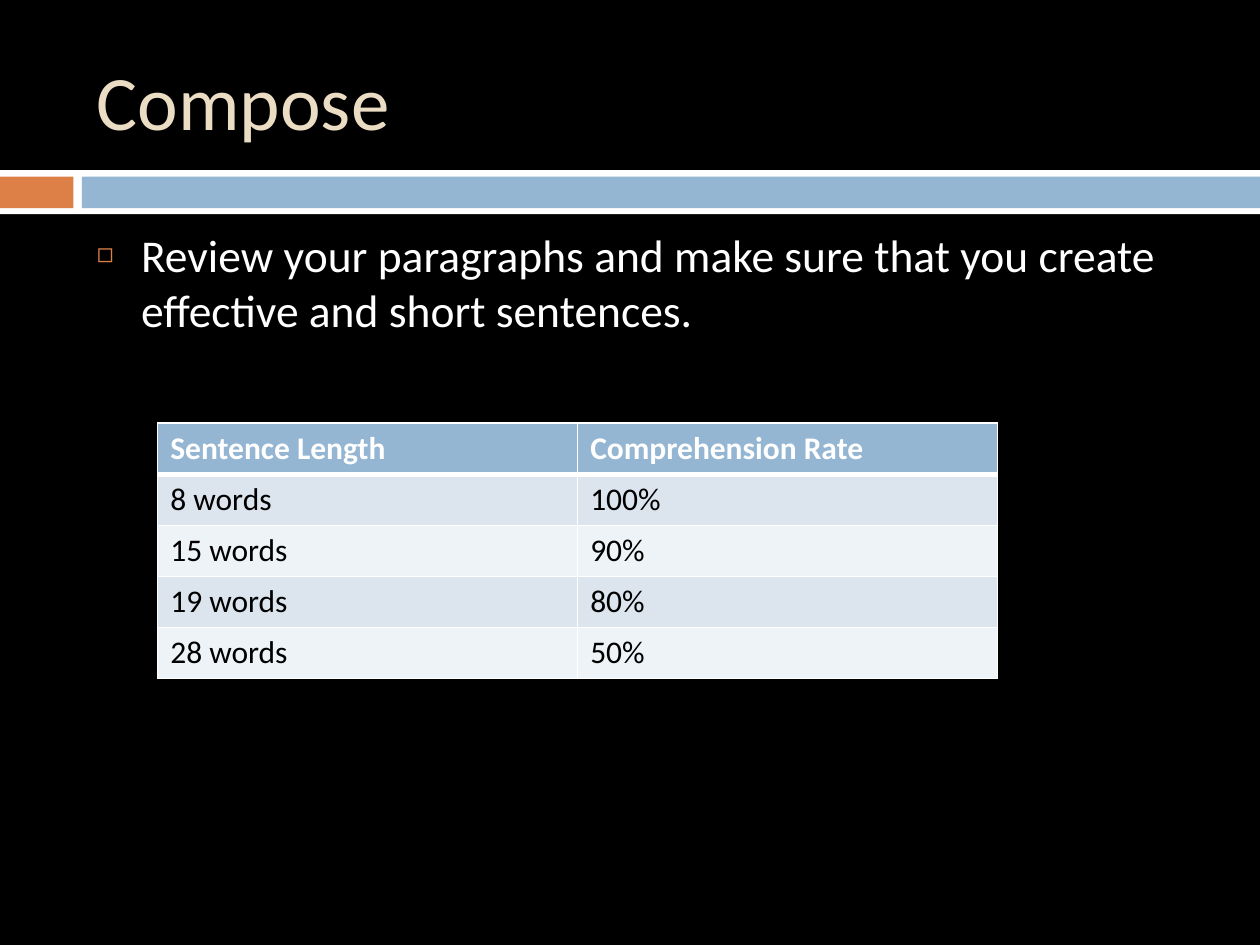
from lxml.etree import SubElement
from pptx import Presentation
from pptx.dml.color import RGBColor
from pptx.enum.shapes import MSO_SHAPE
from pptx.enum.text import MSO_ANCHOR, MSO_AUTO_SIZE, PP_ALIGN
from pptx.oxml.ns import qn
from pptx.util import Cm, Pt

FONT = "Calibri"
WHITE, BLACK = "FFFFFF", "000000"
BLUE, ORANGE, SAND = "94B6D2", "DD8047", "EBDDC3"
BANDS = ["DCE5EE", "EEF3F7"]
ROWS = [
    ("Sentence Length", "Comprehension Rate"),
    ("8 words", "100%"),
    ("15 words", "90%"),
    ("19 words", "80%"),
    ("28 words", "50%"),
]


def paint(fill, color):
    """Make a fill solid in a hex colour."""
    fill.solid()
    fill.fore_color.rgb = RGBColor.from_string(color)


def style(para, size, color, bold=False):
    """Set the font of a whole paragraph."""
    font = para.font
    font.name, font.size, font.bold = FONT, Pt(size), bold
    paint(font.fill, color)


def place(shape, left, top, width, height):
    """Move and size a shape in centimetres."""
    shape.left, shape.top = Cm(left), Cm(top)
    shape.width, shape.height = Cm(width), Cm(height)


def add_bar(slide, left, top, width, height, color):
    """Draw a plain filled bar."""
    bar = slide.shapes.add_shape(
        MSO_SHAPE.RECTANGLE, Cm(left), Cm(top), Cm(width), Cm(height))
    bar.shadow.inherit = False
    paint(bar.fill, color)
    bar.line.fill.background()


def fill_holder(holder, text, anchor):
    """Put text in a placeholder and return its paragraph."""
    frame = holder.text_frame
    frame.text = text
    frame.word_wrap = True
    frame.auto_size = MSO_AUTO_SIZE.NONE
    frame.vertical_anchor = anchor
    para = frame.paragraphs[0]
    para.alignment = PP_ALIGN.LEFT
    return para


def add_bullet(para, char, color, scale, indent):
    """Give a paragraph a coloured bullet and a hanging indent."""
    props = para._p.get_or_add_pPr()
    props.set("marL", str(Cm(indent)))
    props.set("indent", str(-Cm(indent)))
    tint = SubElement(props, qn("a:buClr"))
    SubElement(tint, qn("a:srgbClr"), val=color)
    SubElement(props, qn("a:buSzPct"), val=str(scale * 1000))
    SubElement(props, qn("a:buChar"), char=char)


def add_edges(cell, top, low):
    """Draw white cell borders with the given top and bottom widths."""
    props = cell._tc.get_or_add_tcPr()
    for side, width in zip("LRTB", (1, 1, top, low)):
        line = SubElement(props, qn(f"a:ln{side}"), w=str(Pt(width)))
        fill = SubElement(line, qn("a:solidFill"))
        SubElement(fill, qn("a:srgbClr"), val=WHITE)


def add_grid(slide, left, top, width, height):
    """Add the table with a header row and banded rows."""
    table = slide.shapes.add_table(
        len(ROWS), len(ROWS[0]),
        Cm(left), Cm(top), Cm(width), Cm(height)).table
    for i, row in enumerate(ROWS):
        head = i == 0
        for j, text in enumerate(row):
            cell = table.cell(i, j)
            cell.text = text
            add_edges(cell, 3 if i == 1 else 1, 3 if head else 1)
            paint(cell.fill, BLUE if head else BANDS[(i - 1) % 2])
            style(cell.text_frame.paragraphs[0], 18,
                  WHITE if head else BLACK, head)


def main():
    """Build the slide and save it."""
    deck = Presentation()
    deck.slide_width, deck.slide_height = Cm(25.4), Cm(19.05)
    slide = deck.slides.add_slide(deck.slide_layouts[1])
    paint(slide.background.fill, BLACK)
    add_bar(slide, 0, 3.43, 25.4, 0.89, WHITE)
    add_bar(slide, 0, 3.56, 1.48, 0.64, ORANGE)
    add_bar(slide, 1.65, 3.56, 23.75, 0.64, BLUE)

    title, body = slide.placeholders
    place(title, 1.7, 0.64, 22.65, 2.74)
    style(fill_holder(title, "Compose", MSO_ANCHOR.MIDDLE), 44, SAND)
    place(body, 1.7, 4.45, 22.65, 12.5)
    para = fill_holder(
        body,
        "Review your paragraphs and make sure that you create "
        "effective and short sentences.",
        MSO_ANCHOR.TOP)
    para.space_before = Pt(7)
    add_bullet(para, "◻", ORANGE, 60, 0.89)
    style(para, 26, WHITE)

    add_grid(slide, 3.18, 8.53, 16.93, 5.15)
    deck.save("out.pptx")


if __name__ == "__main__":
    main()
